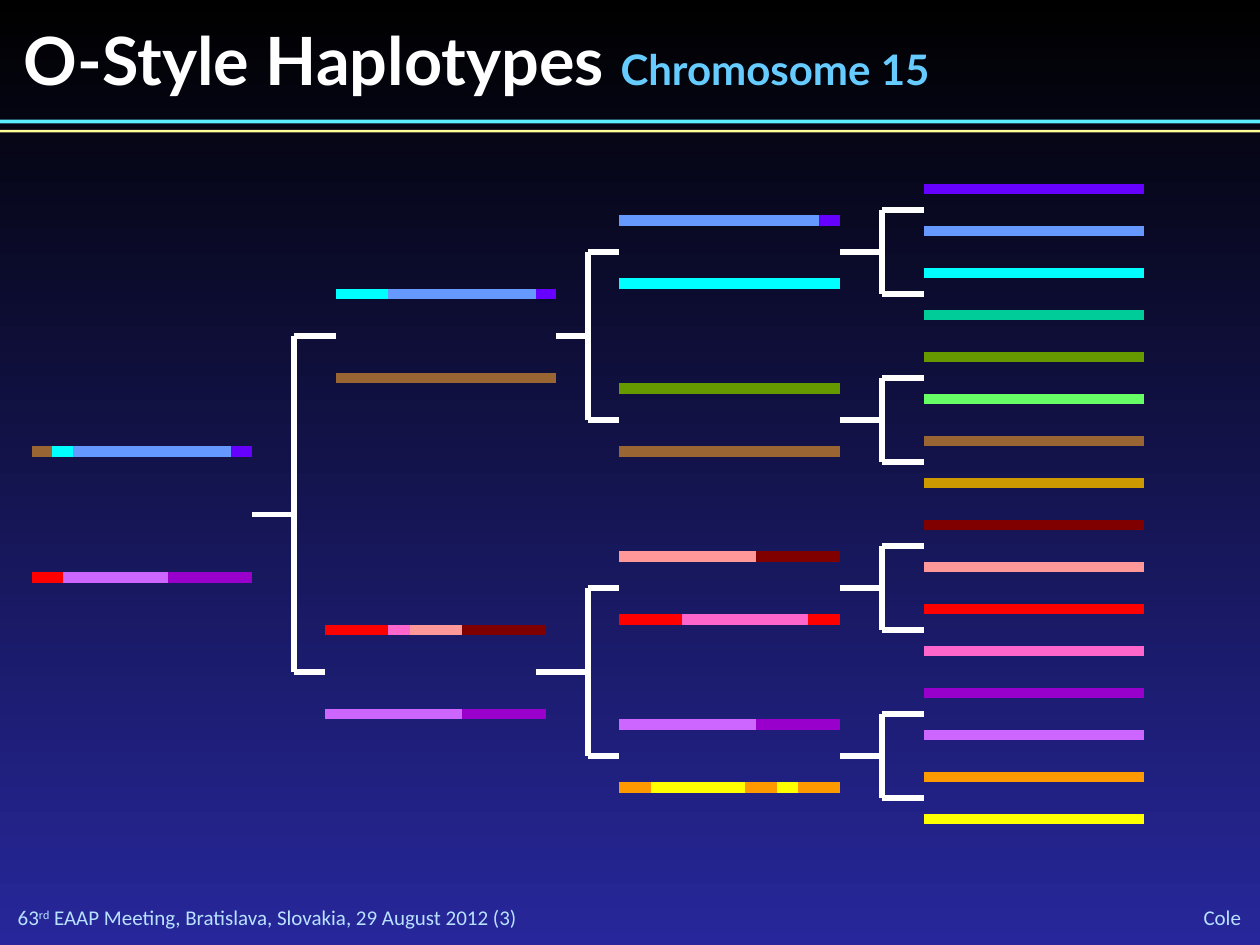
from dataclasses import dataclass

from lxml import etree
from pptx import Presentation
from pptx import util as u
from pptx.dml.color import RGBColor
from pptx.enum import shapes, text
from pptx.oxml import ns


@dataclass(frozen=True)
class Theme:
    head: str = "Lato"
    body: str = "Calibri"
    title: int = 38
    sub: int = 24
    foot: int = 12
    bar: int = 6
    wire: int = 3
    white: str = "FFFFFF"
    sky: str = "66CCFF"
    pale: str = "B8E2FF"
    top: str = "000000"
    base: str = "27279B"
    rule: str = "5BEFFF"
    trim: str = "FFFF99"


T = Theme()

# Haplotype colours, in the order of the oldest generation
HUES = {
    "violet": "6600FF", "blue": "6699FF", "aqua": "00FFFF", "teal": "00CC99",
    "olive": "669900", "lime": "66FF66", "brown": "996633", "gold": "CC9900",
    "maroon": "800000", "salmon": "FF9999", "red": "FF0000", "pink": "FF66CC",
    "purple": "9900CC", "orchid": "CC66FF", "orange": "FF9900", "yellow": "FFFF00",
}

# The pedigree sits on a grid of 1/12 inch.
# Each bar: row, left end, then (right end, hue) for each segment
BARS = [
    # Animal
    (43, 3, [(5, "brown"), (7, "aqua"), (22, "blue"), (24, "violet")]),
    (55, 3, [(6, "red"), (16, "orchid"), (24, "purple")]),
    # Parents
    (28, 32, [(37, "aqua"), (51, "blue"), (53, "violet")]),
    (36, 32, [(53, "brown")]),
    (60, 31, [(37, "red"), (39, "pink"), (44, "salmon"), (52, "maroon")]),
    (68, 31, [(44, "orchid"), (52, "purple")]),
    # Grandparents
    (21, 59, [(78, "blue"), (80, "violet")]),
    (27, 59, [(80, "aqua")]),
    (37, 59, [(80, "olive")]),
    (43, 59, [(80, "brown")]),
    (53, 59, [(72, "salmon"), (80, "maroon")]),
    (59, 59, [(65, "red"), (77, "pink"), (80, "red")]),
    (69, 59, [(72, "orchid"), (80, "purple")]),
    (75, 59, [(62, "orange"), (71, "yellow"), (74, "orange"),
              (76, "yellow"), (80, "orange")]),
]
# Great-grandparents: one plain bar for each hue
BARS += [(18 + 4 * i, 88, [(109, hue)]) for i, hue in enumerate(HUES)]

# Each fork: stem start, spine, stem row, upper (tip, row), lower (tip, row)
FORKS = [
    (24, 28, 49, (32, 32), (31, 64)),
    (53, 56, 32, (59, 24), (59, 40)),
    (51, 56, 64, (59, 56), (59, 72)),
]
FORKS += [(80, 84, y, (88, y - 4), (88, y + 4)) for y in (24, 40, 56, 72)]


def grid(n):
    return u.Inches(n / 12)


def rgb(code):
    return RGBColor.from_string(code)


def line(slide, x1, y1, x2, y2, color, width):
    wire = slide.shapes.add_connector(
        shapes.MSO_CONNECTOR.STRAIGHT, grid(x1), grid(y1), grid(x2), grid(y2))
    wire.line.color.rgb = rgb(color)
    wire.line.width = u.Pt(width)
    etree.SubElement(wire._element.spPr, ns.qn("a:effectLst"))


def bar(slide, y, left, parts):
    for right, hue in parts:
        line(slide, left, y, right, y, HUES[hue], T.bar)
        left = right


def fork(slide, start, spine, mid, upper, lower):
    line(slide, start, mid, spine, mid, T.white, T.wire)
    line(slide, spine, upper[1], spine, lower[1], T.white, T.wire)
    for tip, y in (upper, lower):
        line(slide, spine, y, tip, y, T.white, T.wire)


def band(slide, y, high, color):
    rect = slide.shapes.add_shape(
        shapes.MSO_SHAPE.RECTANGLE, 0, u.Inches(y), u.Inches(10), u.Inches(high))
    rect.shadow.inherit = False
    rect.fill.solid()
    rect.fill.fore_color.rgb = rgb(color)
    rect.line.fill.background()


def label(slide, box, face, runs, bold=False, right=False, middle=True):
    """Each run is (words, size, colour, baseline shift in percent)."""
    frame = slide.shapes.add_textbox(*map(u.Inches, box)).text_frame
    frame.word_wrap = True
    frame.margin_left = frame.margin_right = 0
    frame.margin_top = frame.margin_bottom = 0
    anchor = text.MSO_ANCHOR
    frame.vertical_anchor = anchor.MIDDLE if middle else anchor.TOP
    para = frame.paragraphs[0]
    para.alignment = text.PP_ALIGN.RIGHT if right else text.PP_ALIGN.LEFT
    for words, size, color, shift in runs:
        run = para.add_run()
        run.text = words
        run.font.name = face
        run.font.size = u.Pt(size)
        run.font.bold = bold
        run.font.color.rgb = rgb(color)
        if shift:
            run._r.get_or_add_rPr().set("baseline", str(shift * 1000))


def backdrop(slide):
    fill = slide.background.fill
    fill.gradient()
    fill.gradient_angle = 270
    for stop, place, color in zip(fill.gradient_stops, (0, 1), (T.top, T.base)):
        stop.position = place
        stop.color.rgb = rgb(color)


def main():
    deck = Presentation()
    deck.slide_width, deck.slide_height = u.Inches(10), u.Inches(7.5)
    slide = deck.slides.add_slide(deck.slide_layouts[6])
    backdrop(slide)

    # Header
    band(slide, 0.95, 0.03, T.rule)
    band(slide, 1.03, 0.02, T.trim)
    label(slide, (0.19, 0.15, 9, 0.64), T.head, [
        ("O-Style Haplotypes ", T.title, T.white, 0),
        ("Chromosome 15", T.sub, T.sky, 0),
    ], bold=True, middle=False)

    # Footer
    label(slide, (0.14, 7.18, 5.22, 0.2), T.body, [
        ("63", T.foot, T.pale, 0),
        ("rd", T.foot, T.pale, 30),
        (" EAAP Meeting, Bratislava, Slovakia, 29 August 2012 (3)",
         T.foot, T.pale, 0),
    ])
    label(slide, (8.72, 7.17, 1.13, 0.21), T.body,
          [("Cole", T.foot, T.pale, 0)], right=True)

    # Pedigree
    for item in FORKS:
        fork(slide, *item)
    for item in BARS:
        bar(slide, *item)

    deck.save("out.pptx")


if __name__ == "__main__":
    main()
